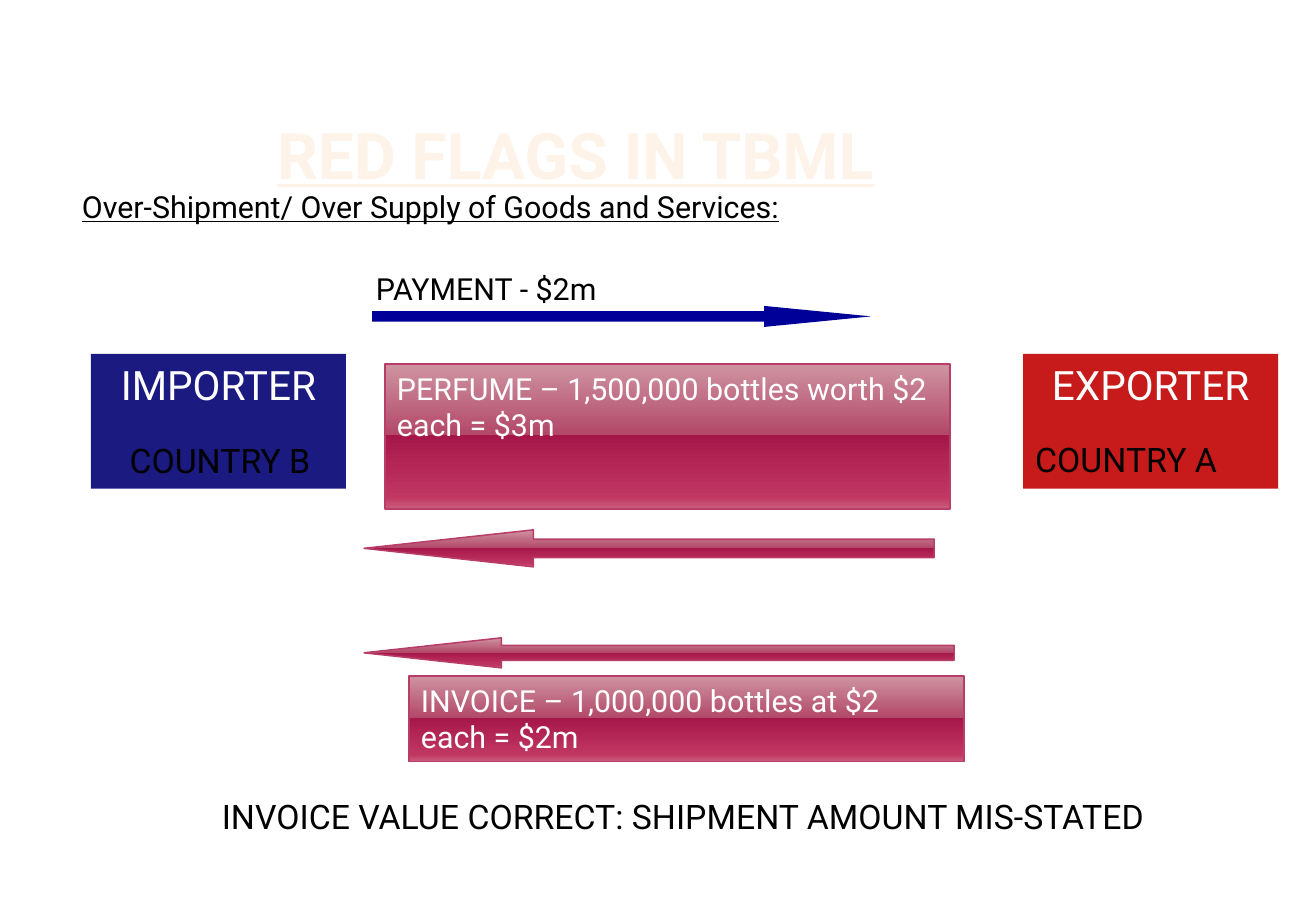
from lxml import etree
from pptx import Presentation
from pptx.dml.color import RGBColor
from pptx.enum.shapes import MSO_SHAPE
from pptx.enum.text import MSO_ANCHOR, MSO_AUTO_SIZE, PP_ALIGN
from pptx.oxml.ns import qn
from pptx.util import Inches, Pt

RECT, LEFT_ARROW, RIGHT_ARROW = MSO_SHAPE.RECTANGLE, MSO_SHAPE.LEFT_ARROW, MSO_SHAPE.RIGHT_ARROW
LEFT, CENTER = PP_ALIGN.LEFT, PP_ALIGN.CENTER
TOP, BOTTOM = MSO_ANCHOR.TOP, MSO_ANCHOR.BOTTOM
NO_FIT = MSO_AUTO_SIZE.NONE

FONT = "Roboto"
BLACK, WHITE, CREAM = "000000", "FFFFFF", "FEF3E8"
BLUE, NAVY, RED, PINK = "000099", "1A1A80", "C71A1A", "B83D68"
GLOSS = [(0, "CE94A2"), (49, "B34869"), (49, "A61749"), (92, "C13764"), (100, "CA5D7C")]


def px(n):
    return round(n * 914400 / 121.5)


def rgb(value):
    return RGBColor.from_string(value)


class Deck:
    def __init__(self):
        self.prs = Presentation()
        self.prs.slide_width, self.prs.slide_height = Inches(10.83), Inches(7.5)
        self.s = self.prs.slides.add_slide(self.prs.slide_layouts[5])

    def add_text(self, sp, text, size, color, align=LEFT, anchor=TOP, bold=False, underline=False):
        tf = sp.text_frame
        tf.word_wrap = True
        tf.auto_size = NO_FIT
        tf.vertical_anchor = anchor
        p = tf.paragraphs[0]
        p.alignment = align
        r = p.add_run()
        r.text = text
        r.font.name, r.font.size = FONT, Pt(size)
        r.font.bold, r.font.underline = bold, underline
        r.font.color.rgb = rgb(color)

    def title(self, box, text, size, color, tab):
        sp = self.s.shapes.title
        sp.left, sp.top, sp.width, sp.height = map(px, box)
        tf = sp.text_frame
        tf.margin_left = tf.margin_right = px(6)
        tf.margin_top = tf.margin_bottom = 0
        tabs = etree.SubElement(tf.paragraphs[0]._p.get_or_add_pPr(), qn("a:tabLst"))
        etree.SubElement(tabs, qn("a:tab"), pos=str(px(tab)), algn="l")
        self.add_text(sp, "\t" + text, size, color, anchor=BOTTOM, bold=True, underline=True)

    def label(self, box, text, size, **style):
        sp = self.s.shapes.add_textbox(*map(px, box))
        self.add_text(sp, text, size, BLACK, **style)

    def shape(self, kind, box, fill=None, head=None):
        sp = self.s.shapes.add_shape(kind, *map(px, box))
        sp.shadow.inherit = False
        if head:
            sp.adjustments[0], sp.adjustments[1] = 0.5, head
        if fill:
            sp.fill.solid()
            sp.fill.fore_color.rgb = rgb(fill)
            sp.line.fill.background()
        else:
            self.gloss(sp)
        return sp

    def gloss(self, sp):
        sp.fill.gradient()
        sp.fill.gradient_angle = 270
        stops = sp._element.spPr.find(qn("a:gradFill")).find(qn("a:gsLst"))
        for stop in list(stops):
            stops.remove(stop)
        for position, color in GLOSS:
            stop = etree.SubElement(stops, qn("a:gs"), pos=str(position * 1000))
            etree.SubElement(stop, qn("a:srgbClr"), val=color)
        sp.line.color.rgb = rgb(PINK)
        sp.line.width = Pt(0.9)

    def box(self, box, text, size, fill=None, align=LEFT):
        self.add_text(self.shape(RECT, box, fill), text, size, WHITE, align)


def main():
    deck = Deck()
    deck.title((66, 91, 1185, 101), "RED FLAGS IN TBML", 38, CREAM, 205)

    parties = [(91, 50, 434, "IMPORTER", "COUNTRY B", NAVY),
               (1023, 956, 433, "EXPORTER", "COUNTRY A", RED)]
    for left, label_left, label_top, role, country, fill in parties:
        deck.box((left, 354, 255, 135), role, 24, fill, CENTER)
        deck.label((label_left, label_top, 340, 52), country, 20, align=CENTER)

    deck.shape(LEFT_ARROW, (364, 638, 590, 30), head=4.58)
    deck.box((409, 676, 555, 86), "INVOICE – 1,000,000 bottles at $2 each = $2m", 18)
    deck.shape(LEFT_ARROW, (364, 530, 570, 37), head=4.58)
    deck.box((385, 364, 565, 145), "PERFUME – 1,500,000 bottles worth $2 each = $3m", 18)

    deck.shape(RIGHT_ARROW, (372, 306, 499, 21), BLUE, head=5.09)
    deck.label((364, 264, 276, 49), "PAYMENT - $2m", 18)
    deck.label((112, 790, 1142, 53), "INVOICE VALUE CORRECT: SHIPMENT AMOUNT MIS-STATED", 20, align=CENTER)
    deck.label((70, 182, 1134, 49), "Over-Shipment/ Over Supply of Goods and Services:", 18, underline=True)
    deck.prs.save("out.pptx")


if __name__ == "__main__":
    main()
